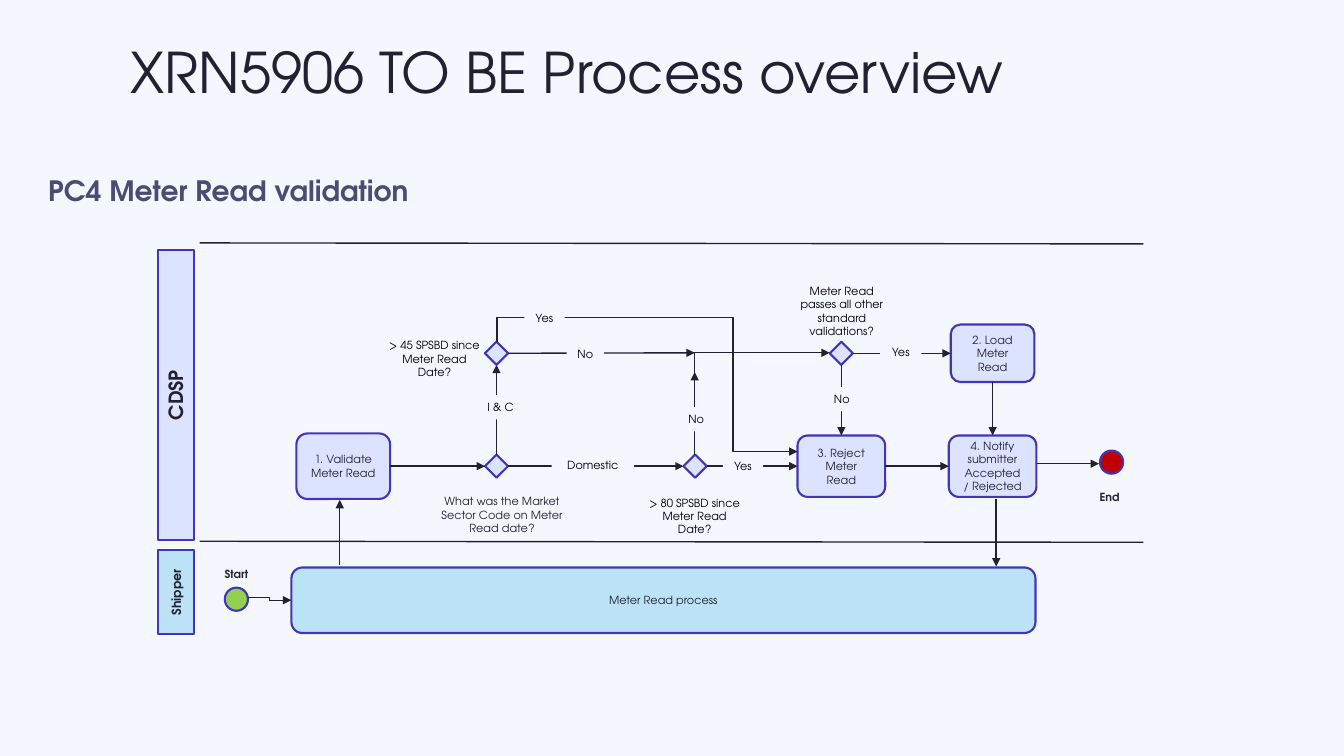
from lxml import etree
from pptx import Presentation
from pptx.dml.color import RGBColor
from pptx.enum.shapes import MSO_CONNECTOR as Link, MSO_SHAPE as Kind
from pptx.enum.text import MSO_ANCHOR as Anchor, PP_ALIGN as Align
from pptx.oxml.ns import qn
from pptx.util import Inches, Pt

INK, EDGE, PAPER = "212133", "4235BA", "F5F7FF"
LILAC, SKY, BLACK = "DCE3FF", "BCE3F5", "000000"
TOP, LEFT, BOTTOM, RIGHT = range(4)


def paint(part, color):
    """Give a fill, or the fill of a line, one solid colour."""
    part.solid()
    part.fore_color.rgb = RGBColor.from_string(color)


def write(shape, text, size=8, color=INK, bold=False, align=Align.CENTER,
          anchor=Anchor.MIDDLE, wrap=True):
    frame = shape.text_frame
    frame.word_wrap = wrap
    frame.vertical_anchor = anchor
    for i, line in enumerate(text.split("\n")):
        para = frame.paragraphs[0] if i == 0 else frame.add_paragraph()
        para.alignment = align
        run = para.add_run()
        run.text = line
        run.font.name = "TeX Gyre Adventor"
        run.font.size = Pt(size)
        run.font.bold = bold
        paint(run.font.fill, color)


deck = Presentation()
deck.slide_width, deck.slide_height = Inches(13.33), Inches(7.5)
slide = deck.slides.add_slide(deck.slide_layouts[6])
paint(slide.background.fill, PAPER)
shapes = slide.shapes

# Headings
title = shapes.add_textbox(Inches(1.2), Inches(0.4), Inches(11.63), Inches(0.7))
write(title, "XRN5906 TO BE Process overview", 40, align=Align.LEFT)
title.text_frame.paragraphs[0].line_spacing = 0.9
topic = shapes.add_textbox(Inches(0.38), Inches(1.67), Inches(12.45), Inches(0.43))
write(topic, "PC4 Meter Read validation", 20, "4B4B74", True, Align.LEFT)

# Lanes, steps, decisions and events
nodes = {}
for name, kind, x, y, w, h, fill in [
    ("cdsp", Kind.RECTANGLE, 1.57, 2.48, 0.35, 2.88, LILAC),
    ("shipper", Kind.RECTANGLE, 1.57, 5.46, 0.35, 0.83, SKY),
    ("process", Kind.ROUNDED_RECTANGLE, 2.89, 5.63, 7.38, 0.65, SKY),
    ("validate", Kind.ROUNDED_RECTANGLE, 2.94, 4.3, 0.93, 0.65, LILAC),
    ("load", Kind.ROUNDED_RECTANGLE, 9.43, 3.22, 0.83, 0.57, LILAC),
    ("reject", Kind.ROUNDED_RECTANGLE, 7.91, 4.32, 0.87, 0.61, LILAC),
    ("notify", Kind.ROUNDED_RECTANGLE, 9.41, 4.32, 0.87, 0.61, LILAC),
    ("sector", Kind.DIAMOND, 4.81, 4.51, 0.23, 0.23, LILAC),
    ("over45", Kind.DIAMOND, 4.81, 3.39, 0.23, 0.23, LILAC),
    ("over80", Kind.DIAMOND, 6.78, 4.51, 0.23, 0.23, LILAC),
    ("passes", Kind.DIAMOND, 8.23, 3.39, 0.23, 0.23, LILAC),
    ("start", Kind.FLOWCHART_CONNECTOR, 2.23, 5.83, 0.23, 0.23, "92D050"),
    ("end", Kind.FLOWCHART_CONNECTOR, 10.91, 4.47, 0.23, 0.23, "C00000"),
]:
    node = shapes.add_shape(kind, Inches(x), Inches(y), Inches(w), Inches(h))
    node.shadow.inherit = False
    paint(node.fill, fill)
    paint(node.line.fill, EDGE)
    node.line.width = Pt(1.5)
    nodes[name] = node

for name, text in [
    ("process", "Meter Read process"),
    ("validate", "1. Validate Meter Read"),
    ("load", "2. Load\nMeter Read"),
    ("reject", "3. Reject\nMeter Read"),
    ("notify", "4. Notify submitter Accepted / Rejected"),
]:
    write(nodes[name], text)
for name, text, size in [("cdsp", "CDSP", 14), ("shipper", "Shipper", 9)]:
    write(nodes[name], text, size, bold=True)
    nodes[name].text_frame._txBody.bodyPr.set("vert", "vert270")

# Lane borders and flows: each end is a point or a (node, side) pair
borders = [((1.98, 2.41), (11.34, 2.42)), ((1.98, 5.37), (11.34, 5.38))]
flows = [
    (("validate", RIGHT), ("sector", LEFT)),
    (("sector", RIGHT), ("over80", LEFT)),
    (("sector", TOP), ("over45", BOTTOM)),
    (("over80", RIGHT), ("reject", LEFT)),
    (("passes", BOTTOM), ("reject", TOP)),
    (("passes", RIGHT), ("load", LEFT)),
    (("load", BOTTOM), ("notify", TOP)),
    (("reject", RIGHT), ("notify", LEFT)),
    (("over45", RIGHT), (6.89, 3.5)),
    ((6.89, 4.43), (6.89, 3.69)),
    ((3.37, 5.61), (3.37, 4.96)),
    ((9.88, 4.95), (9.88, 5.62)),
    ((10.29, 4.6), (10.9, 4.6)),
    ((2.46, 5.93), ("process", LEFT)),
]
lines = []
for tail, head in borders + flows:
    kind = Link.ELBOW if head == ("process", LEFT) else Link.STRAIGHT
    spots = [(0, 0) if isinstance(end[0], str) else end for end in (tail, head)]
    line = shapes.add_connector(kind, *[Inches(v) for spot in spots for v in spot])
    if isinstance(tail[0], str):
        line.begin_connect(nodes[tail[0]], tail[1])
    if isinstance(head[0], str):
        line.end_connect(nodes[head[0]], head[1])
    etree.SubElement(line._element.spPr, qn("a:effectLst"))
    lines.append(line)

for first, *rest in [
    [(6.89, 4.51), (6.89, 3.5), (8.23, 3.5)],
    [(4.93, 3.39), (4.93, 3.15), (7.27, 3.15), (7.27, 4.48), (7.91, 4.48)],
]:
    draft = shapes.build_freeform(Inches(first[0]), Inches(first[1]))
    draft.add_line_segments([(Inches(x), Inches(y)) for x, y in rest], close=False)
    bend = draft.convert_to_shape()
    bend.shadow.inherit = False
    bend.fill.background()
    lines.append(bend)

for i, line in enumerate(lines):
    paint(line.line.fill, INK)
    line.line.width = Pt(1)
    if i >= len(borders):
        stroke = line._element.spPr.find(qn("a:ln"))
        etree.SubElement(stroke, qn("a:tailEnd"), type="triangle")

# Answers on the flows
for text, x, y, w in [
    ("No", 8.16, 3.84, 0.38),
    ("Yes", 8.73, 3.38, 0.41),
    ("I & C", 4.73, 3.92, 0.47),
    ("Domestic", 5.47, 4.5, 0.82),
    ("Yes", 7.17, 4.51, 0.4),
    ("Yes", 5.2, 3.04, 0.4),
    ("No", 5.62, 3.4, 0.37),
    ("No", 6.72, 4.04, 0.37),
]:
    tag = shapes.add_textbox(Inches(x), Inches(y), Inches(w), Inches(0.24))
    paint(tag.fill, PAPER)
    write(tag, text, color=BLACK, anchor=Anchor.TOP, wrap=False)

# Questions and event names
for text, x, y, w, h, color, bold in [
    ("Meter Read passes all other standard validations?", 7.76, 2.77, 1.18, 0.5, BLACK, False),
    ("> 80 SPSBD since Meter Read Date?", 6.3, 4.87, 1.18, 0.37, BLACK, False),
    ("> 45 SPSBD since Meter Read Date?", 3.72, 3.31, 1.18, 0.37, BLACK, False),
    ("What was the Market Sector Code on Meter Read date?", 4.13, 4.86, 1.7, 0.37, INK, False),
    ("Start", 2.05, 5.58, 0.59, 0.23, INK, True),
    ("End", 10.75, 4.82, 0.51, 0.23, INK, True),
]:
    note = shapes.add_textbox(Inches(x), Inches(y), Inches(w), Inches(h))
    write(note, text, color=color, bold=bold, anchor=Anchor.TOP)

deck.save("out.pptx")
